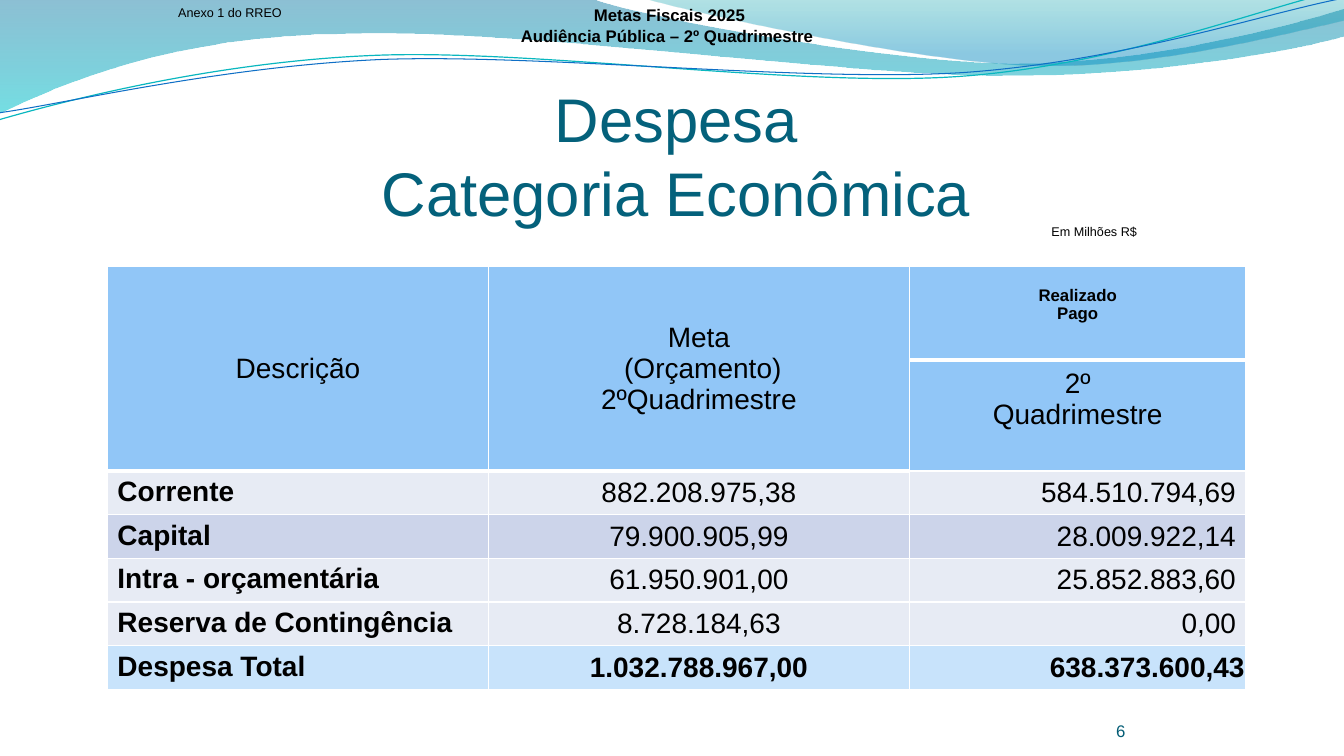
from lxml import etree
from pptx import Presentation
from pptx import util as u
from pptx.dml.color import RGBColor
from pptx.enum import text
from pptx.oxml import ns

Cm = u.Cm
FONT = "Arial"
BLACK = RGBColor(0x00, 0x00, 0x00)
WHITE = RGBColor(0xFF, 0xFF, 0xFF)
TEAL = RGBColor(0x04, 0x61, 0x7B)
NUMBER = RGBColor(0x03, 0x5C, 0x75)
HEAD = RGBColor(0x91, 0xC6, 0xF7)
PALE = RGBColor(0xE7, 0xEB, 0xF4)
MID = RGBColor(0xCC, 0xD4, 0xEA)
TOTAL = RGBColor(0xC8, 0xE3, 0xFB)
DEEP = RGBColor(0x00, 0x74, 0xA0)
CYAN = RGBColor(0x00, 0xC4, 0xCD)
SKY = RGBColor(0x00, 0x8A, 0xBF)
SEA = RGBColor(0x00, 0xA0, 0xA8)
AQUA = RGBColor(0x09, 0xB7, 0xBF)
BLUE = RGBColor(0x0F, 0x6F, 0xC6)

LEFT, MIDDLE, RIGHT = text.PP_ALIGN.LEFT, text.PP_ALIGN.CENTER, text.PP_ALIGN.RIGHT
TOP, CENTER, BOTTOM = (text.MSO_ANCHOR.TOP, text.MSO_ANCHOR.MIDDLE,
                       text.MSO_ANCHOR.BOTTOM)

# Outlines in cm: a pair is a line end, six numbers are a curve
BAND = [(0, -.03), (14.91, -.03), (16.1, .43, 22.48, 1.6, 25.68, 1.6),
        (28.88, 1.6, 32.46, .66, 33.86, .23), (33.91, .91),
        (33.3, 1.12, 29.46, 1.93, 25.25, 1.91),
        (21.06, 1.91, 12.93, .71, 8.71, .86),
        (4.37, .89, 1.55, 2.11, -.03, 2.87)]
CREST = [(16.23, -.03), (17.25, .28, 23.09, 1.57, 26.04, 1.65),
         (28.98, 1.75, 32.56, .81, 33.86, .53), (33.86, 0)]
UPPER = [(-.03, 3.02), (1.63, 2.54, 5.36, 1.57, 9.37, 1.4),
         (13.39, 1.22, 20.04, 2.21, 24.13, 1.93),
         (28.19, 1.65, 31.78, .2, 33.81, -.25)]
LOWER = [(0, 2.84), (1.6, 2.62, 5.54, 1.68, 9.6, 1.5),
         (13.64, 1.35, 20.22, 2.08, 24.26, 1.83),
         (28.32, 1.55, 31.88, .33, 33.88, -.05)]

ROWS = [
    ("Corrente", "882.208.975,38", "584.510.794,69", PALE),
    ("Capital", "79.900.905,99", "28.009.922,14", MID),
    ("Intra - orçamentária", "61.950.901,00", "25.852.883,60", PALE),
    ("Reserva de Contingência", "8.728.184,63", "0,00", PALE),
    ("Despesa Total", "1.032.788.967,00", "638.373.600,43", TOTAL),
]


def outline(slide, steps, close):
    ends = [(Cm(step[-2]), Cm(step[-1])) for step in steps]
    maker = slide.shapes.build_freeform(*ends[0])
    maker.add_line_segments(ends[1:], close=close)
    shape = maker.convert_to_shape()
    shape.shadow.inherit = False
    # Bend the segments that have control points
    lines = list(shape._element.iter(ns.qn("a:lnTo")))
    for line, step in zip(lines, steps[1:]):
        if len(step) == 6:
            line.tag = ns.qn("a:cubicBezTo")
            for i in (0, 2):
                knot = etree.Element(ns.qn("a:pt"), x=str(Cm(step[i]) - shape.left),
                                     y=str(Cm(step[i + 1]) - shape.top))
                line.insert(i // 2, knot)
    return shape


def wave(slide, steps, stops, angle):
    shape = outline(slide, steps, True)
    shape.line.fill.background()
    shape.fill.gradient()
    shape.fill.gradient_angle = angle
    for stop, (place, color, alpha) in zip(shape.fill.gradient_stops, stops):
        stop.position = place
        stop.color.rgb = color
    # Transparency
    tags = shape._element.iter(ns.qn("a:srgbClr"))
    for tag, (_, _, alpha) in zip(list(tags), stops):
        etree.SubElement(tag, ns.qn("a:alpha")).set("val", str(alpha * 1000))


def thread(slide, steps, color, width):
    shape = outline(slide, steps, False)
    shape.fill.background()
    shape.line.color.rgb = color
    shape.line.width = u.Pt(width)


def write(frame, words, size, color=BLACK, align=LEFT, bold=False):
    frame.text = words
    for para in frame.paragraphs:
        para.alignment = align
        for run in para.runs:
            run.font.name = FONT
            run.font.size = u.Pt(size)
            run.font.bold = bold
            run.font.color.rgb = color


def inset(frame, side, top):
    frame.margin_left = frame.margin_right = Cm(side)
    frame.margin_top = frame.margin_bottom = Cm(top)


def label(slide, place, words, size, side=.25, top=.13, anchor=TOP, **look):
    box = slide.shapes.add_textbox(*map(Cm, place))
    frame = box.text_frame
    frame.word_wrap = True
    frame.vertical_anchor = anchor
    inset(frame, side, top)
    write(frame, words, size, **look)


def border(cell, side, width):
    props = cell._tc.get_or_add_tcPr()
    line = etree.SubElement(props, ns.qn("a:" + side), w=str(u.Pt(width)))
    fill = etree.SubElement(line, ns.qn("a:solidFill"))
    etree.SubElement(fill, ns.qn("a:srgbClr"), val=str(WHITE))


def fill(cell, words, color, size=20, align=MIDDLE, bold=False,
         anchor=CENTER, side=.25, foot=.13, top=.96, base=.96):
    write(cell.text_frame, words, size, align=align, bold=bold)
    inset(cell, side, .13)
    cell.margin_bottom = Cm(foot)
    cell.vertical_anchor = anchor
    for name, width in (("lnL", .96), ("lnR", .96), ("lnT", top), ("lnB", base)):
        border(cell, name, width)
    cell.fill.solid()
    cell.fill.fore_color.rgb = color


def table(slide):
    grid = slide.shapes.add_table(7, 3, Cm(2.71), Cm(6.72), Cm(28.69), Cm(10.65)).table
    for col, width in zip(grid.columns, (9.6, 10.61, 8.48)):
        col.width = Cm(width)
    for row, height in zip(grid.rows, [2.36, 2.79] + [1.1] * 5):
        row.height = Cm(height)

    # Heading
    for col, words in enumerate(("Descrição", "Meta\n (Orçamento)\n2ºQuadrimestre")):
        grid.cell(0, col).merge(grid.cell(1, col))
        fill(grid.cell(0, col), words, HEAD, base=3)
    fill(grid.cell(0, 2), "Realizado\nPago", HEAD, 12, bold=True, foot=.58, base=3)
    fill(grid.cell(1, 2), "2º\n Quadrimestre ", HEAD, foot=.94, top=3)

    # Values
    for row, (name, goal, paid, color) in enumerate(ROWS, 2):
        last = color == TOTAL
        side = .03 if last else .25
        top = 3 if row == 2 else .96
        fill(grid.cell(row, 0), name, color, align=LEFT, bold=True, anchor=TOP, top=top)
        fill(grid.cell(row, 1), goal, color, bold=last, side=side, top=top)
        fill(grid.cell(row, 2), paid, color, align=RIGHT, bold=last, side=side)


def title(slide):
    shape = slide.shapes.title
    shape.left, shape.top, shape.width, shape.height = map(Cm, (5.61, 2.58, 22.87, 3.18))
    frame = shape.text_frame
    frame.vertical_anchor = BOTTOM
    inset(frame, 0, 0)
    frame.margin_top = Cm(.13)
    write(frame, "Despesa\vCategoria Econômica", 44, TEAL, MIDDLE)


def main():
    deck = Presentation()
    deck.slide_width, deck.slide_height = Cm(33.87), Cm(19.05)
    slide = deck.slides.add_slide(deck.slide_layouts[5])

    # Waves
    wave(slide, BAND, [(0, DEEP, 45), (1, CYAN, 55)], 270)
    wave(slide, CREST, [(.2, SKY, 45), (1, SEA, 30)], 90)
    thread(slide, UPPER, AQUA, .85)
    thread(slide, LOWER, BLUE, .75)

    # Content
    title(slide)
    table(slide)

    # Labels
    label(slide, (26.24, 17.65, 2.12, 1.02), "6", 12, 0, 0, BOTTOM,
          color=NUMBER, align=RIGHT)
    label(slide, (26.24, 5.51, 2.67, .64), "Em Milhões R$", 9, .1, align=MIDDLE)
    label(slide, (4.24, 0, 3.43, .64), "Anexo 1 do RREO", 9)
    label(slide, (12.57, 0, 8.61, 1.28),
          "Metas Fiscais 2025\nAudiência Pública – 2º Quadrimestre ", 12,
          anchor=CENTER, align=MIDDLE, bold=True)
    deck.save("out.pptx")


if __name__ == "__main__":
    main()
